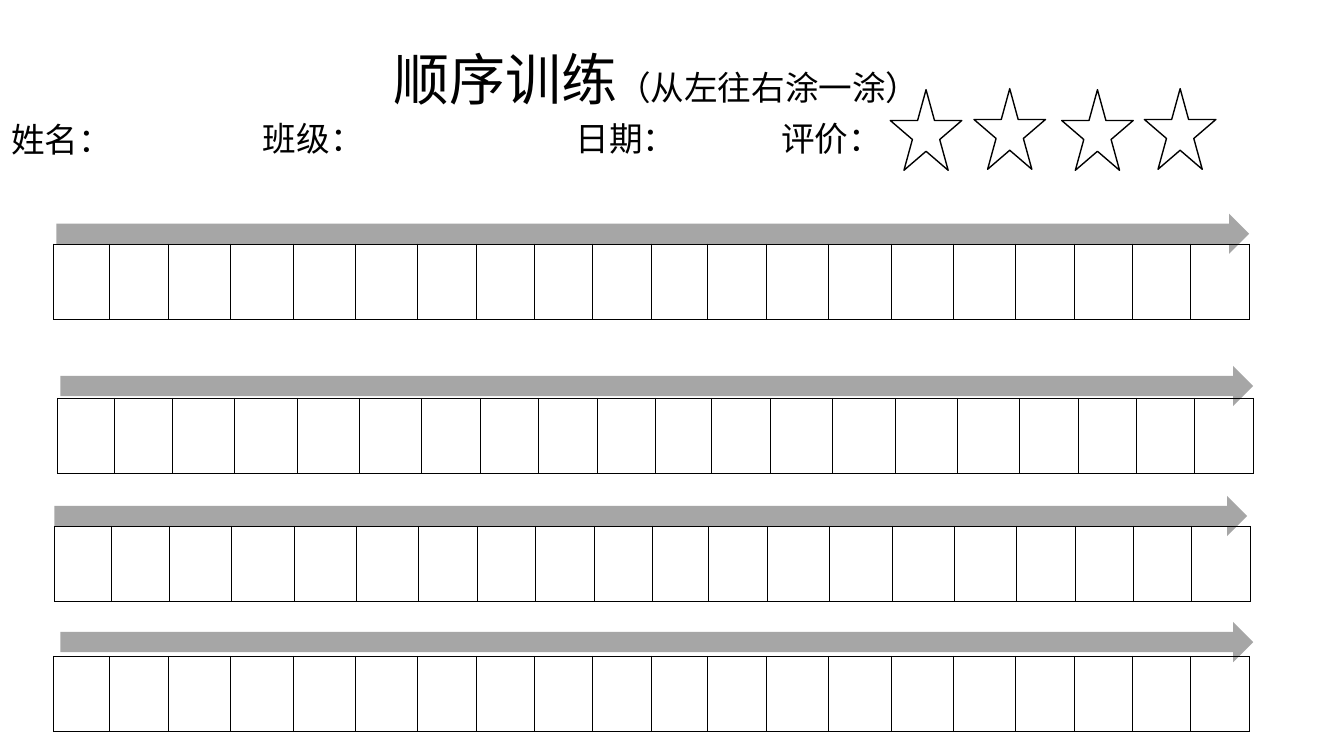
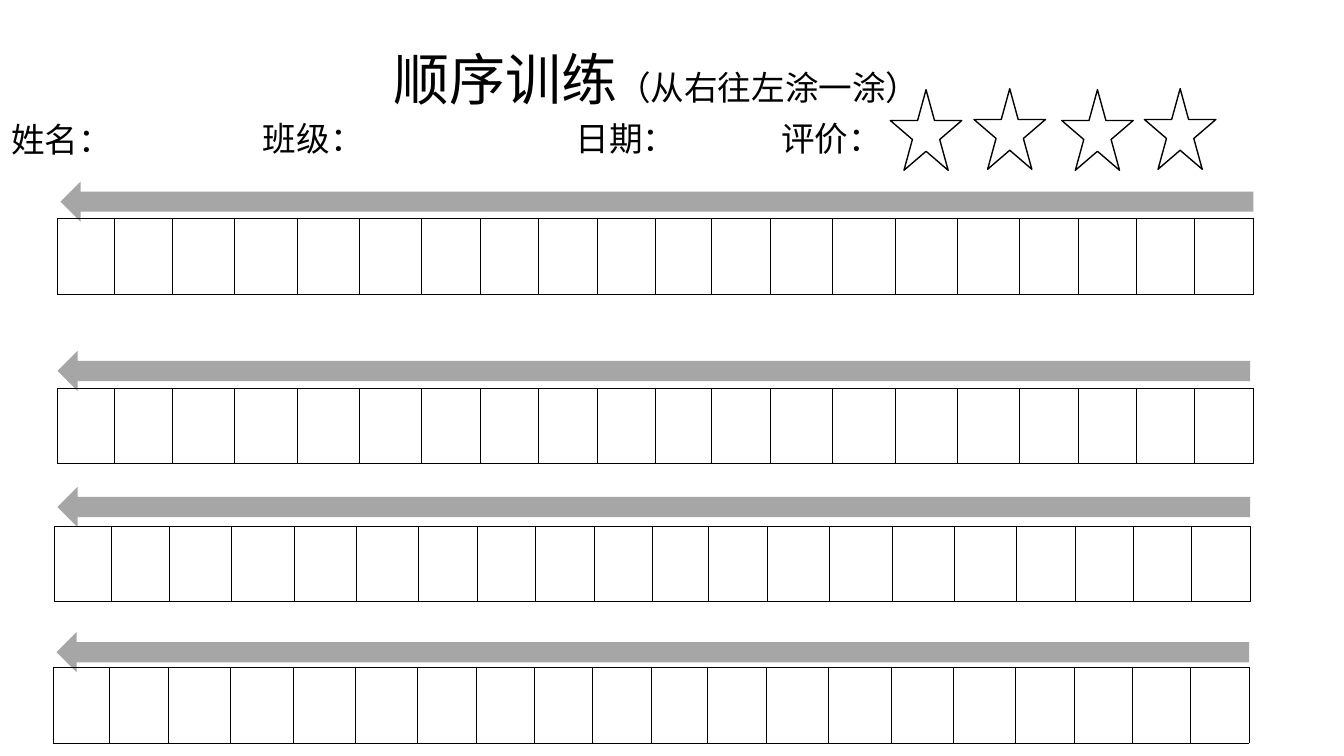
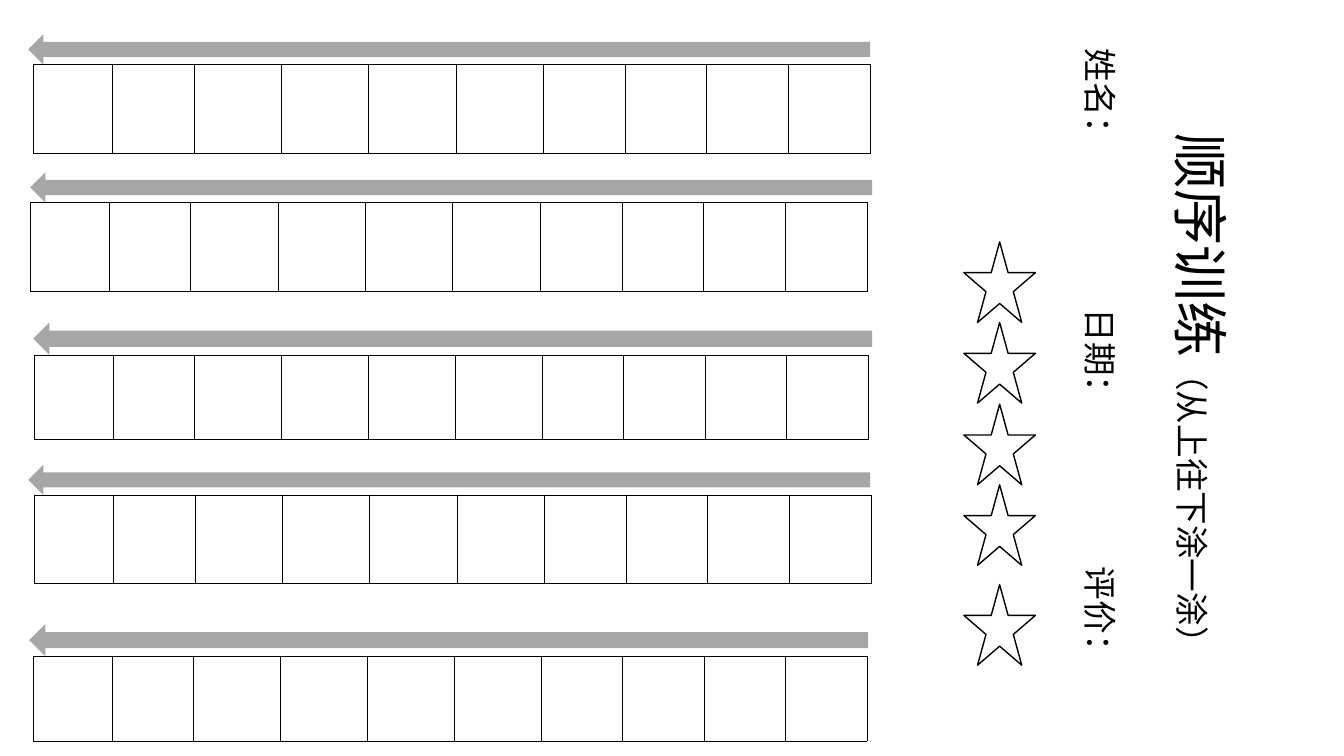
"""Build three colouring sheets for practising order and direction."""
from lxml.etree import SubElement
from pptx import Presentation
from pptx.dml.color import RGBColor
from pptx.enum.shapes import MSO_SHAPE
from pptx.enum.text import MSO_ANCHOR, MSO_AUTO_SIZE, PP_ALIGN
from pptx.oxml.ns import qn
from pptx.util import Pt

PX = 9144
BLACK, GREY = "000000", "A6A6A6"
HAN, LATIN = "Noto Sans CJK SC", "Calibri"
STAR = (71, 80)
LABEL = (130, 59)
COLS = [56, 58] + [62] * 4 + [58] * 4

SIZES = {
    "wide": {"arrow": (1183, 40), "table": (593, 75), "count": 2},
    "tall": {"arrow": (835, 30), "table": (830, 88), "count": 1},
    "low": {"arrow": (832, 32), "table": (827, 84), "count": 1},
}

ACROSS = {
    "title": (245, 0, 812, 117),
    "names": [("姓名：", 1, 117), ("班级：", 251, 117),
              ("日期：", 561, 117), ("评价：", 765, 117)],
    "turn": 0,
    "stars": [(883, 89), (966, 88), (1053, 89), (1135, 88)],
}
DOWN = {
    "title": (919, 336, 583, 115),
    "names": [("姓名：", 1018, 74), ("日期：", 1018, 332), ("评价：", 1018, 588)],
    "turn": 90,
    "stars": [(956, y) for y in (240, 320, 401, 481, 580)],
}

SHEETS = [
    {"head": ACROSS, "hint": "（从左往右涂一涂）", "spin": 0, "rows": [
        ("wide", (56, 212), (53, 242)),
        ("wide", (60, 363), (57, 395)),
        ("wide", (54, 492), (54, 522)),
        ("wide", (60, 617), (53, 651)),
    ]},
    {"head": ACROSS, "hint": "（从右往左涂一涂）", "spin": 180, "rows": [
        ("wide", (60, 180), (57, 217)),
        ("wide", (57, 348), (57, 385)),
        ("wide", (57, 483), (54, 522)),
        ("wide", (56, 627), (53, 662)),
    ]},
    {"head": DOWN, "hint": "（从上往下涂一涂）", "spin": 180, "rows": [
        ("tall", (28, 34), (33, 64)),
        ("tall", (30, 171), (30, 201)),
        ("low", (33, 320), (34, 352)),
        ("tall", (28, 461), (34, 491)),
        ("low", (29, 619), (33, 651)),
    ]},
]


def color(code):
    return RGBColor.from_string(code)


def emu(*sides):
    return [round(side * PX) for side in sides]


def add_run(para, text, size, face):
    run = para.add_run()
    run.text = text
    font = run.font
    font.size, font.name = Pt(size), face
    font.color.rgb = color(BLACK)
    SubElement(font._element, qn("a:ea"), typeface=HAN)


def set_up(holder, box, turn, anchor, align, before):
    holder.left, holder.top, holder.width, holder.height = emu(*box)
    holder.rotation = turn
    frame = holder.text_frame
    frame.word_wrap = True
    frame.auto_size = MSO_AUTO_SIZE.NONE
    frame.vertical_anchor = anchor
    para = frame.paragraphs[0]
    para.alignment = align
    para.line_spacing = 0.9
    para.space_before = Pt(before)
    return para


def add_head(slide, head, hint):
    title, first = slide.placeholders
    para = set_up(title, head["title"], head["turn"],
                  MSO_ANCHOR.BOTTOM, PP_ALIGN.CENTER, 0)
    add_run(para, "顺序训练", 40, HAN)
    add_run(para, hint, 24, HAN)
    rest = [slide.shapes.add_textbox(0, 0, 0, 0) for _ in head["names"][1:]]
    for holder, (name, left, top) in zip([first, *rest], head["names"]):
        para = set_up(holder, (left, top, *LABEL), head["turn"],
                      MSO_ANCHOR.TOP, PP_ALIGN.LEFT, 10)
        add_run(para, name, 24, LATIN)


def add_form(slide, kind, spot, size):
    form = slide.shapes.add_shape(kind, *emu(*spot, *size))
    form.shadow.inherit = False
    return form


def add_star(slide, spot):
    star = add_form(slide, MSO_SHAPE.STAR_5_POINT, spot, STAR)
    star.fill.background()
    star.line.color.rgb = color(BLACK)
    star.line.width = Pt(1)


def add_arrow(slide, spot, size, spin):
    arrow = add_form(slide, MSO_SHAPE.RIGHT_ARROW, spot, size)
    arrow.rotation = spin
    arrow.fill.solid()
    arrow.fill.fore_color.rgb = color(GREY)
    arrow.line.fill.background()


def add_edges(cell):
    props = cell._tc.get_or_add_tcPr()
    for side in "LRTB":
        line = SubElement(props, qn("a:ln" + side), w=str(Pt(0.5)))
        fill = SubElement(line, qn("a:solidFill"))
        SubElement(fill, qn("a:srgbClr"), val=BLACK)


def add_boxes(slide, spot, size):
    table = slide.shapes.add_table(1, len(COLS), *emu(*spot, *size)).table
    table.first_row = table.horz_banding = False
    for col, part, cell in zip(table.columns, COLS, table.rows[0].cells):
        col.width = emu(size[0] * part / sum(COLS))[0]
        add_edges(cell)
        cell.fill.background()


def add_row(slide, kind, start, spot, spin):
    size = SIZES[kind]
    add_arrow(slide, start, size["arrow"], spin)
    left, top = spot
    for step in range(size["count"]):
        add_boxes(slide, (left + step * size["table"][0], top), size["table"])


def main():
    deck = Presentation()
    deck.slide_width, deck.slide_height = emu(1333, 750)
    for sheet in SHEETS:
        slide = deck.slides.add_slide(deck.slide_layouts[0])
        add_head(slide, sheet["head"], sheet["hint"])
        for row in sheet["rows"]:
            add_row(slide, *row, sheet["spin"])
        for spot in sheet["head"]["stars"]:
            add_star(slide, spot)
    deck.save("out.pptx")


if __name__ == "__main__":
    main()
